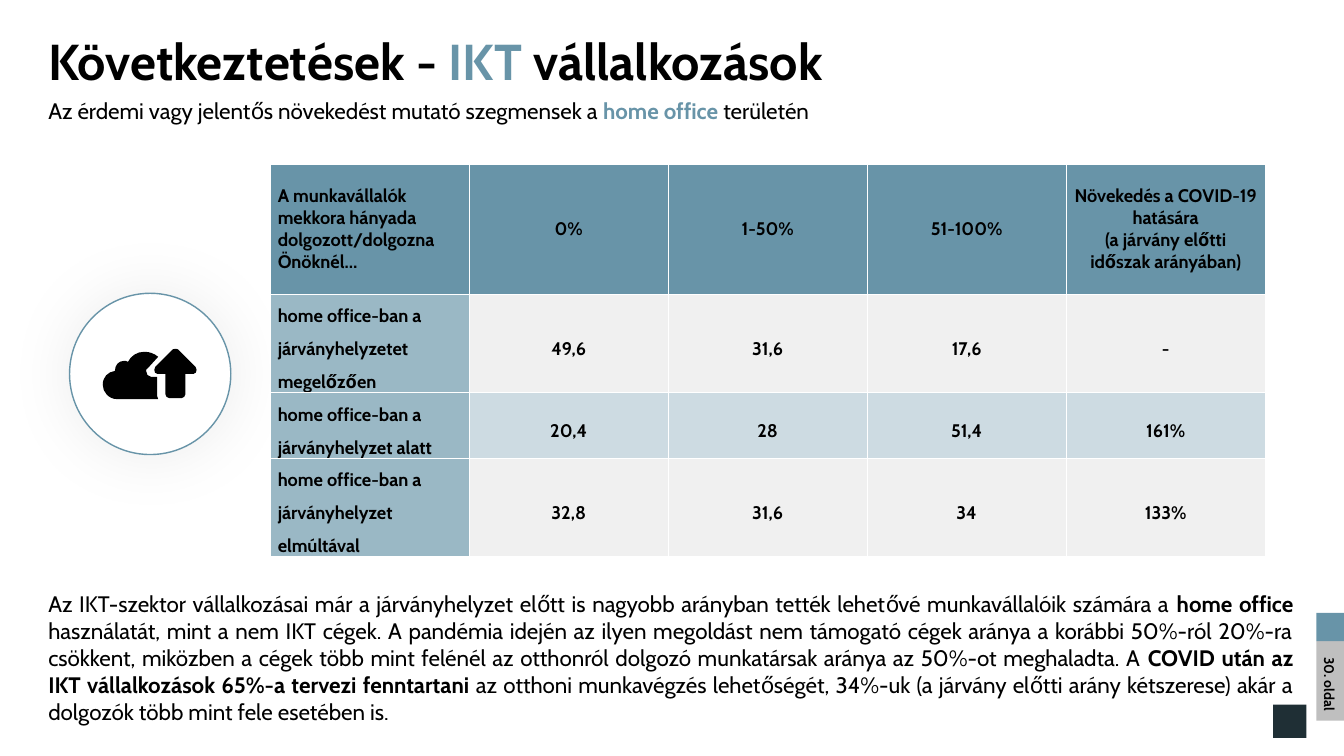
from dataclasses import dataclass

from lxml import etree
from pptx import Presentation
from pptx.dml.color import RGBColor
from pptx.enum import shapes, text
from pptx.oxml import ns
from pptx.util import Pt


@dataclass(frozen=True)
class Theme:
    font: str = "Cabin"
    black: str = "000000"
    white: str = "FFFFFF"
    teal: str = "6894A8"
    label: str = "9AB8C5"
    light: str = "F0F0F0"
    band: str = "CDDBE2"
    grey: str = "BFBFBF"
    dark: str = "1F2F35"
    title: int = 36
    body: int = 16
    cell: int = 13
    page_number: int = 10


THEME = Theme()
ALIGN = text.PP_ALIGN
MIDDLE = text.MSO_ANCHOR.MIDDLE

HEADER = ["A munkavállalók mekkora hányada dolgozott/dolgozna Önöknél…",
          "0%", "1-50%", "51-100%",
          "Növekedés a COVID-19 hatására\n(a járvány előtti időszak arányában)"]
ROWS = [
    ["home office-ban a járványhelyzetet megelőzően", "49,6", "31,6", "17,6", "-"],
    ["home office-ban a járványhelyzet alatt", "20,4", "28", "51,4", "161%"],
    ["home office-ban a járványhelyzet elmúltával", "32,8", "31,6", "34", "133%"],
]
COLUMN_WIDTH = 142.15
ROW_HEIGHTS = [92.6, 69.1, 45.4, 69.1]

# Outlines in points: pairs are straight lines, sixes are cubic curves
CLOUD = [
    (112.3, 283), (112.3, 283.7, 113, 284.4, 113, 285.1), (83.5, 285.1),
    (77.8, 285.1, 73.4, 280.1, 73.4, 275), (73.4, 269.3, 77, 265.7, 82.1, 265),
    (82.1, 260.6, 85, 257.8, 88.6, 257.8), (89.3, 257.8, 90.7, 257.8, 91.4, 258.5),
    (93.6, 254.2, 97.9, 251.3, 103, 251.3), (107.3, 251.3, 110.2, 252.7, 113, 254.9),
    (105.8, 262.8), (104.4, 263.5, 104.4, 264.2, 104.4, 265),
    (104.4, 267.1, 105.8, 269.3, 108, 269.3), (112.3, 269.3),
]
ARROW = [
    (125.3, 249.1), (126, 249.1, 126.7, 249.1, 127.1, 249.5), (139.7, 262.1),
    (139.7, 262.8, 140.4, 263.5, 140.4, 264.2),
    (140.4, 265.7, 139.7, 267.1, 138.2, 267.1), (132.5, 267.1), (132.5, 281.5),
    (132.5, 283, 131, 284.4, 129.6, 284.4), (121, 284.4),
    (119.5, 284.4, 118.1, 283, 118.1, 281.5), (118.1, 267.1), (112.4, 267.1),
    (110.9, 267.1, 110.2, 265.7, 110.2, 264.2),
    (110.2, 263.5, 110.9, 262.8, 110.9, 262.1), (123.5, 249.5),
    (123.9, 249.1, 124.6, 249.1, 125.3, 249.1),
]


def color(value):
    return RGBColor.from_string(value)


def add_span(para, words, size, bold=False, ink=THEME.black):
    span = para.add_run()
    span.text = words
    span.font.name = THEME.font
    span.font.size = Pt(size)
    span.font.bold = bold
    span.font.color.rgb = color(ink)


def add_text(page, place, size, spans, align=ALIGN.LEFT, anchor=text.MSO_ANCHOR.TOP, spacing=None):
    """Each span is (words, bold, colour)."""
    box = page.shapes.add_textbox(*map(Pt, place))
    frame = box.text_frame
    frame.word_wrap = True
    frame.vertical_anchor = anchor
    para = frame.paragraphs[0]
    para.alignment = align
    para.line_spacing = spacing
    for words, bold, ink in spans:
        add_span(para, words, size, bold, ink)


def paint(shape, fill):
    shape.shadow.inherit = False
    shape.fill.solid()
    shape.fill.fore_color.rgb = color(fill)
    shape.line.fill.background()


def add_block(page, kind, place, fill):
    block = page.shapes.add_shape(kind, *map(Pt, place))
    paint(block, fill)
    return block


def add_soft_shadow(shape, blur, opacity):
    effects = shape.element.spPr.find(ns.qn("a:effectLst"))
    shadow = etree.SubElement(effects, ns.qn("a:outerShdw"), blurRad=str(Pt(blur)),
                              dist="0", algn="ctr", rotWithShape="0")
    ink = etree.SubElement(shadow, ns.qn("a:srgbClr"), val=THEME.black)
    etree.SubElement(ink, ns.qn("a:alpha"), val=str(opacity * 1000))


def add_outline(page, parts, fill):
    """Build the outline through its end points, then bend the curved parts."""
    corners = [(Pt(part[-2]), Pt(part[-1])) for part in parts]
    builder = page.shapes.build_freeform(*corners[0])
    builder.add_line_segments(corners[1:], close=True)
    outline = builder.convert_to_shape()
    paint(outline, fill)
    lines = list(outline.element.iter(ns.qn("a:lnTo")))
    for line, part in zip(lines, parts[1:]):
        if len(part) == 2:
            continue
        curve = etree.Element(ns.qn("a:cubicBezTo"))
        for x, y in zip(part[::2], part[1::2]):
            etree.SubElement(curve, ns.qn("a:pt"), x=str(Pt(x) - outline.left),
                             y=str(Pt(y) - outline.top))
        line.getparent().replace(line, curve)


def add_icon(page):
    circle = add_block(page, shapes.MSO_SHAPE.OVAL, (49.7, 209.5, 115.2, 115.2), THEME.white)
    circle.line.color.rgb = color(THEME.teal)
    circle.line.width = Pt(1)
    add_soft_shadow(circle, blur=49, opacity=7)
    for parts in (CLOUD, ARROW):
        add_outline(page, parts, THEME.black)


def fill_cell(cell, words, fill, align, spacing):
    cell.fill.solid()
    cell.fill.fore_color.rgb = color(fill)
    cell.vertical_anchor = MIDDLE
    cell.margin_left = cell.margin_right = Pt(5.4)
    cell.margin_top = cell.margin_bottom = 0
    para = cell.text_frame.paragraphs[0]
    para.alignment = align
    para.line_spacing = spacing
    for number, line in enumerate(words.split("\n")):
        if number:
            para.add_line_break()
        add_span(para, line, THEME.cell, bold=True)


def add_share_table(page):
    count = len(HEADER)
    frame = page.shapes.add_table(len(ROW_HEIGHTS), count, Pt(193), Pt(117.6),
                                  Pt(COLUMN_WIDTH * count), Pt(sum(ROW_HEIGHTS)))
    table = frame.table
    for column in table.columns:
        column.width = Pt(COLUMN_WIDTH)
    for r, words in enumerate([HEADER] + ROWS):
        table.rows[r].height = Pt(ROW_HEIGHTS[r])
        for c, value in enumerate(words):
            if r == 0:
                fill = THEME.teal
            elif c == 0:
                fill = THEME.label
            else:
                fill = THEME.light if r % 2 else THEME.band
            fill_cell(table.cell(r, c), value, fill,
                      ALIGN.CENTER if c else ALIGN.LEFT, 1.5 if r else None)


def add_page_number(page):
    tab = add_block(page, shapes.MSO_SHAPE.RECTANGLE, (940.3, 457.9, 19.7, 56.9), THEME.grey)
    frame = tab.text_frame
    frame.vertical_anchor = MIDDLE
    frame.margin_right = Pt(4.3)
    frame._txBody.bodyPr.set("vert", "vert")
    para = frame.paragraphs[0]
    para.alignment = ALIGN.RIGHT
    add_span(para, "30. oldal", THEME.page_number, bold=True)
    add_block(page, shapes.MSO_SHAPE.RECTANGLE, (940.3, 437.8, 19.7, 20.1), THEME.teal)


def main():
    deck = Presentation()
    deck.slide_width, deck.slide_height = Pt(960), Pt(540)
    page = deck.slides.add_slide(deck.slide_layouts[6])
    ink, accent = THEME.black, THEME.teal
    add_block(page, shapes.MSO_SHAPE.RECTANGLE, (909.4, 503.3, 23.8, 23.8), THEME.dark)

    # Heading
    add_text(page, (27.4, 23, 699, 55.4), THEME.title, [
        ("Következtetések - ", True, ink), ("IKT ", True, accent),
        ("vállalkozások", True, ink)], spacing=0.9)
    add_text(page, (27.4, 65.5, 634.3, 26.6), THEME.body, [
        ("Az érdemi vagy jelentős növekedést mutató szegmensek a ", False, ink),
        ("home office ", True, accent), ("területén", False, ink)], anchor=MIDDLE)

    # Conclusion
    add_text(page, (27.4, 418, 903.6, 104.4), THEME.body, [
        ("Az IKT-szektor vállalkozásai már a járványhelyzet előtt is nagyobb arányban tették "
         "lehetővé munkavállalóik számára a ", False, ink),
        ("home office", True, ink),
        (" használatát, mint a nem IKT cégek. A pandémia idején az ilyen megoldást nem támogató "
         "cégek aránya a korábbi 50%-ról 20%-ra csökkent, miközben a cégek több mint felénél az "
         "otthonról dolgozó munkatársak aránya az 50%-ot meghaladta. A ", False, ink),
        ("COVID után az IKT vállalkozások 65%-a tervezi fenntartani ", True, ink),
        ("az otthoni munkavégzés lehetőségét, 34%-uk (a járvány előtti arány kétszerese) akár a "
         "dolgozók több mint fele esetében is.", False, ink)], align=ALIGN.JUSTIFY)

    # Icon, table and page number
    add_icon(page)
    add_share_table(page)
    add_page_number(page)
    deck.save("out.pptx")


if __name__ == "__main__":
    main()
